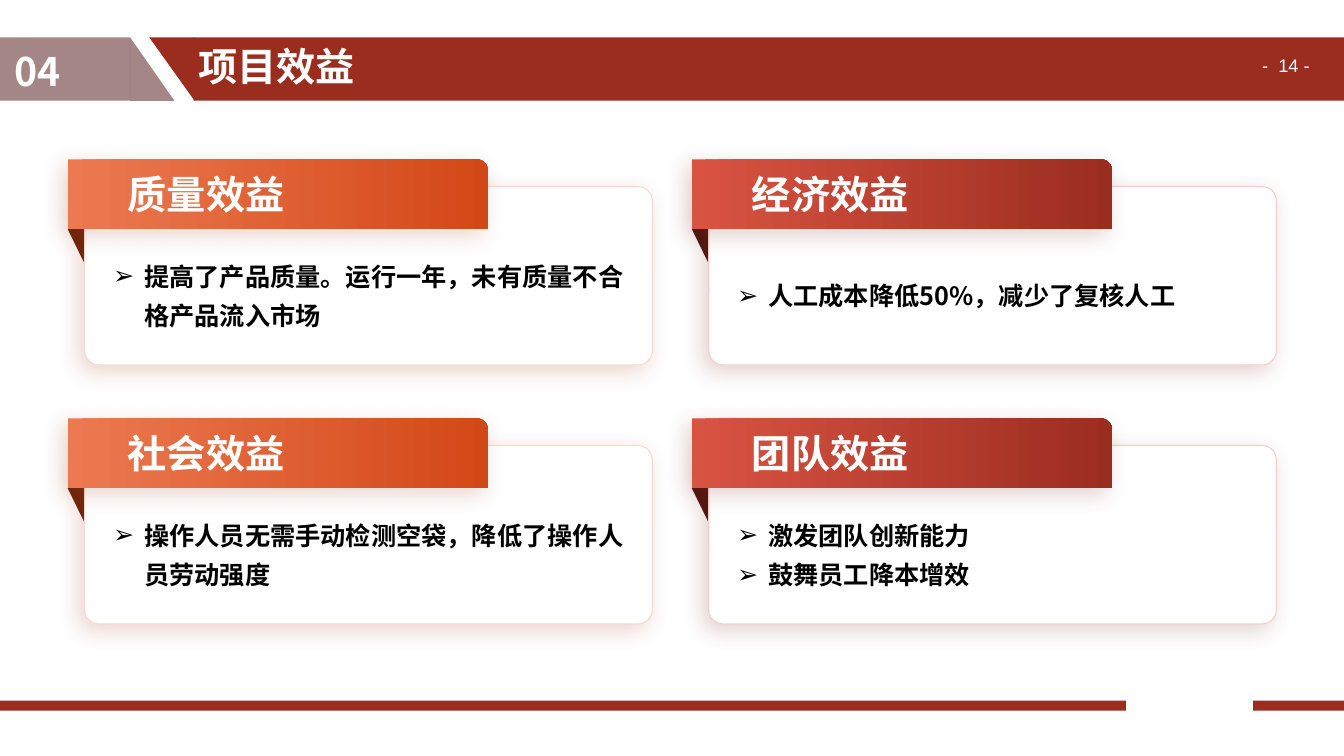
import pptx
import pptx.util
import pptx.dml.color
import pptx.enum.shapes
import pptx.enum.text
import pptx.oxml
import pptx.oxml.ns
import lxml.etree

Inches = pptx.util.Inches
Pt = pptx.util.Pt
RGBColor = pptx.dml.color.RGBColor
SHAPE = pptx.enum.shapes.MSO_SHAPE
ANCHOR = pptx.enum.text.MSO_ANCHOR
ALIGN = pptx.enum.text.PP_ALIGN
qn = pptx.oxml.ns.qn

RED = RGBColor(0x9B, 0x2D, 0x1F)
MAUVE = RGBColor(0x85, 0x5D, 0x5D)
WHITE = RGBColor(0xFF, 0xFF, 0xFF)
BLACK = RGBColor(0, 0, 0)
ORANGE_THEME = {
    "start": RGBColor(0xEC, 0x79, 0x51), "end": RGBColor(0xD3, 0x48, 0x17),
    "fold": RGBColor(0x69, 0x24, 0x0C), "border": RGBColor(0xFA, 0xD9, 0xCD),
    "shadow": RGBColor(0x9E, 0x36, 0x11),
}
RED_THEME = {
    "start": RGBColor(0xD9, 0x53, 0x42), "end": RED,
    "fold": RGBColor(0x4E, 0x17, 0x10), "border": RGBColor(0xF4, 0xCE, 0xC9),
    "shadow": RGBColor(0x74, 0x22, 0x17),
}

CJK = "Noto Sans CJK SC"
HEADING = {"size": Pt(28), "name": CJK, "bold": True}
BODY = {"size": Pt(18), "name": CJK, "bold": True}
PAGE_NUMBER = {"size": Pt(13), "name": "Arial"}

CARDS = [
    ("质量效益", ["提高了产品质量。运行一年，未有质量不合格产品流入市场"]),
    ("经济效益", ["人工成本降低50%，减少了复核人工"]),
    ("社会效益", ["操作人员无需手动检测空袋，降低了操作人员劳动强度"]),
    ("团队效益", ["激发团队创新能力", "鼓舞员工降本增效"]),
]


def add_child(parent, tag, **attributes):
    child = lxml.etree.SubElement(parent, qn(tag))
    for name, value in attributes.items():
        child.set(name, str(value))
    return child


def add_block(page, kind, box, color=None, alpha=None):
    shape = page.shapes.add_shape(kind, *map(Inches, box))
    shape.shadow.inherit = False
    shape.line.fill.background()
    if color is not None:
        shape.fill.solid()
        shape.fill.fore_color.rgb = color
    if alpha is not None:
        tint = shape._element.spPr.find(qn("a:solidFill")).find(qn("a:srgbClr"))
        add_child(tint, "a:alpha", val=alpha * 1000)
    return shape


def add_soft_shadow(shape, color):
    effects = shape._element.spPr.find(qn("a:effectLst"))
    outer = add_child(effects, "a:outerShdw", blurRad=Pt(16), dist=Pt(6),
                      dir=135 * 60000, algn="tr", rotWithShape=0)
    add_child(add_child(outer, "a:srgbClr", val=color), "a:alpha", val=20000)


def write(para, text, style, color):
    span = para.add_run()
    span.text = text
    for name, value in style.items():
        setattr(span.font, name, value)
    span.font.color.rgb = color
    add_child(span._r.get_or_add_rPr(), "a:ea", typeface=CJK)


def add_label(page, box, text, style, wrap=True):
    label = page.shapes.add_textbox(*map(Inches, box))
    label.text_frame.word_wrap = wrap
    para = label.text_frame.paragraphs[0]
    write(para, text, style, WHITE)
    return para


def add_header(page, box):
    left, top, width, height = box
    add_block(page, SHAPE.RIGHT_TRIANGLE, (left + 1.48, top, 0.45, height), RED).rotation = 180
    add_block(page, SHAPE.RECTANGLE, (left, top, 1.29, height), MAUVE, 74)
    add_block(page, SHAPE.RECTANGLE, (left + 1.92, top, width - 1.92, height), RED)
    add_block(page, SHAPE.RIGHT_TRIANGLE, (left + 1.29, top, 0.44, height), MAUVE, 74)
    add_label(page, (left + 12.42, top + 0.12, 0.78, 0.33), "-  14 -", PAGE_NUMBER, False)
    add_label(page, (left + 0.05, top + 0.05, 1.87, 0.57), "04", HEADING)
    title = add_label(page, (left + 1.87, top + 0.05, 10.5, 0.56), "项目效益",
                      HEADING | {"name": "Arial"})
    title.line_spacing = 0.9


def add_footer(page, box):
    left, top, width, height = box
    add_block(page, SHAPE.RECTANGLE, box, RED)
    gap = add_block(page, SHAPE.RECTANGLE, (left + 11.17, top - 0.04, 1.25, height + 0.08), WHITE)
    gap.line.color.rgb = WHITE
    gap.line.width = Pt(1)


def add_panel(page, box, points, theme):
    panel = add_block(page, SHAPE.ROUNDED_RECTANGLE, box, WHITE)
    panel.adjustments[0] = 0.08
    panel.line.color.rgb = theme["border"]
    panel.line.width = Pt(0.75)
    add_soft_shadow(panel, theme["shadow"])
    frame = panel.text_frame
    layout = {"margin_left": Inches(0.24), "margin_top": Inches(0.31),
              "margin_right": Inches(0.08), "margin_bottom": 0,
              "word_wrap": True, "vertical_anchor": ANCHOR.MIDDLE}
    for name, value in layout.items():
        setattr(frame, name, value)
    for index, point in enumerate(points):
        para = frame.add_paragraph() if index else frame.paragraphs[0]
        para.alignment = ALIGN.LEFT
        para.line_spacing = 1.3
        properties = para._p.get_or_add_pPr()
        properties.set("marL", str(Inches(0.31)))
        properties.set("indent", str(-Inches(0.31)))
        add_child(properties, "a:buFont", typeface="Arial")
        add_child(properties, "a:buChar", char="➢")
        write(para, point, BODY, BLACK)


def add_ribbon(page, box, heading, theme):
    ribbon = add_block(page, SHAPE.ROUND_1_RECTANGLE, box)
    ribbon.fill.gradient()
    ribbon.fill.gradient_angle = 0
    for stop, key in zip(ribbon.fill.gradient_stops, ("start", "end")):
        stop.color.rgb = theme[key]
    add_soft_shadow(ribbon, theme["shadow"])
    ribbon.text_frame.vertical_anchor = ANCHOR.MIDDLE
    para = ribbon.text_frame.paragraphs[0]
    para.alignment = ALIGN.LEFT
    para._p.get_or_add_pPr().set("indent", str(Inches(0.5)))
    write(para, heading, HEADING, WHITE)


def add_card(page, box, heading, points, theme):
    left, top, width, height = box
    fold = add_block(page, SHAPE.RIGHT_TRIANGLE, (left, top + 0.69, 0.21, 0.43), theme["fold"])
    fold.rotation = 180
    add_panel(page, (left + 0.17, top + 0.27, width - 0.17, height - 0.27), points, theme)
    add_ribbon(page, (left, top, 4.17, 0.69), heading, theme)


def main():
    deck = pptx.Presentation()
    deck.slide_width, deck.slide_height = Inches(13.33), Inches(7.5)
    page = deck.slides.add_slide(deck.slide_layouts[6])
    add_header(page, (0, 0.37, 13.33, 0.63))
    add_footer(page, (0, 6.95, 13.33, 0.1))
    for index, (heading, points) in enumerate(CARDS):
        row, column = divmod(index, 2)
        box = (0.67 + column * 6.19, 1.58 + row * 2.57, 5.8, 2.04)
        add_card(page, box, heading, points, (ORANGE_THEME, RED_THEME)[column])
    deck.save("out.pptx")


if __name__ == "__main__":
    main()
